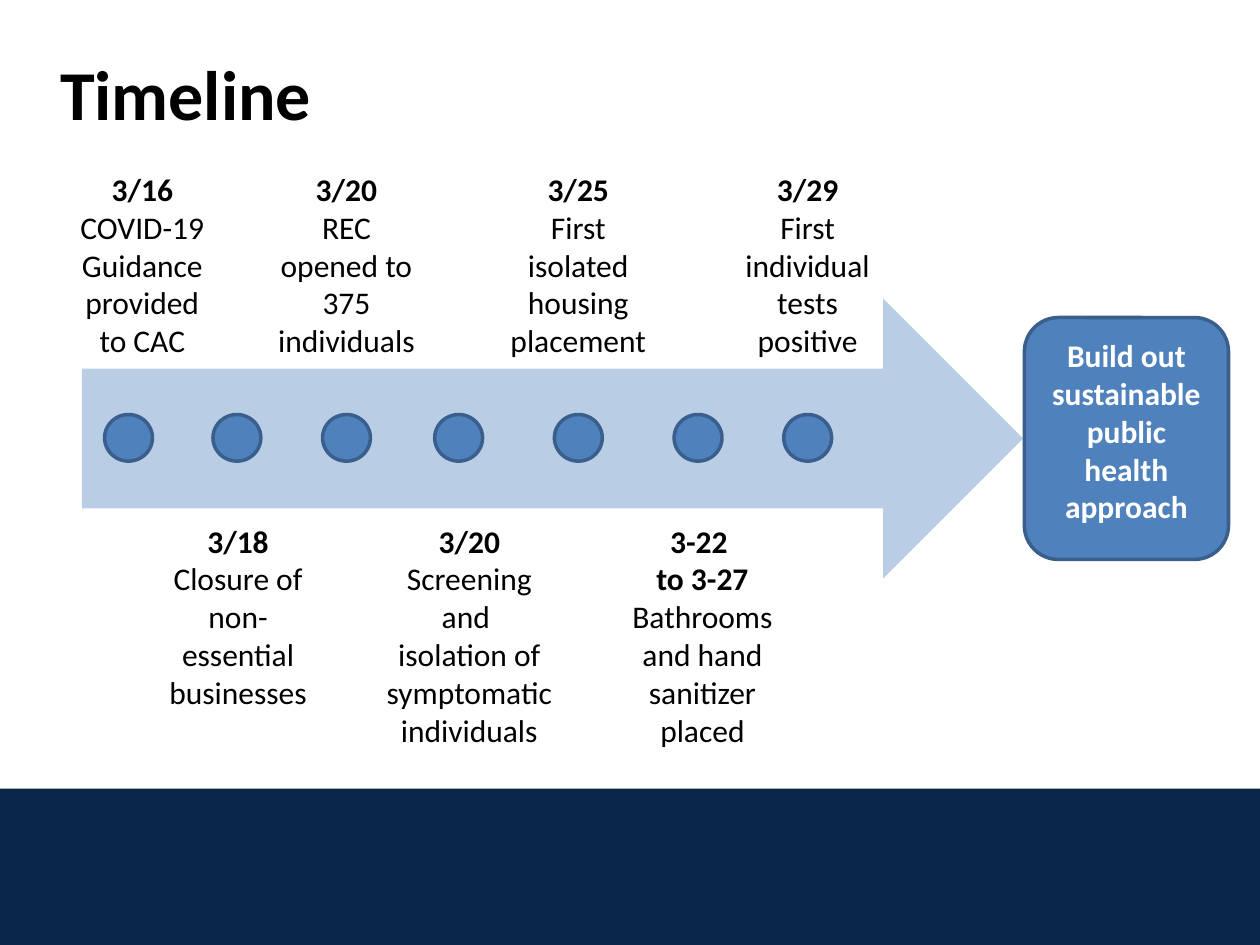
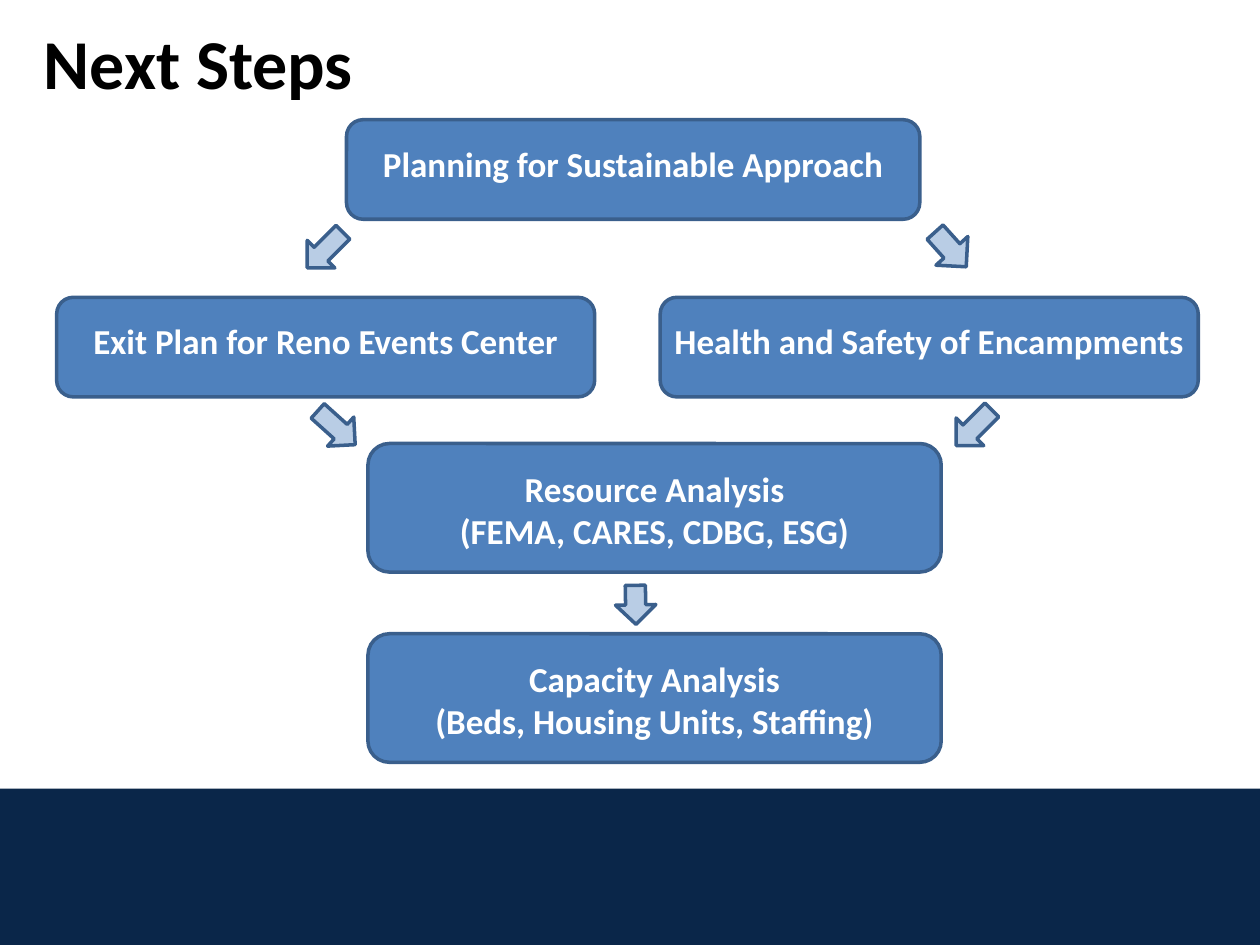
import dataclasses

import pptx
import pptx.dml.color
import pptx.enum.shapes
import pptx.enum.text
import pptx.util

SHAPES = pptx.enum.shapes.MSO_SHAPE
ALIGN = pptx.enum.text.PP_ALIGN
ANCHOR = pptx.enum.text.MSO_ANCHOR

COLUMNS, ROWS = 100, 75
CELL = pptx.util.Inches(0.1)


@dataclasses.dataclass(frozen=True)
class Theme:
    font: str = "Calibri"
    ink: str = "000000"
    light: str = "FFFFFF"
    band: str = "0A2649"
    box: str = "4F81BD"
    outline: str = "3A5F8C"
    arrow: str = "B9CDE5"
    title_size: int = 40
    step_size: int = 20
    label_size: int = 18
    line_width: int = 2


THEME = Theme()


def cells(*counts):
    return [round(count * CELL) for count in counts]


def rgb(value):
    return pptx.dml.color.RGBColor.from_string(value)


def set_values(target, values):
    for name, value in values.items():
        setattr(target, name, value)


def write(shape, lines, size, color, align=ALIGN.CENTER, bold_lines=None, insets=(1, 0.5)):
    """Write one paragraph per line; only the first bold_lines are bold, or all if None."""
    side, top = cells(*insets)
    frame = shape.text_frame
    set_values(frame, {
        "word_wrap": True, "vertical_anchor": ANCHOR.TOP,
        "margin_left": side, "margin_right": side, "margin_top": top, "margin_bottom": 0,
    })
    for index, line in enumerate(lines):
        paragraph = frame.add_paragraph() if index else frame.paragraphs[0]
        paragraph.alignment = align
        run = paragraph.add_run()
        run.text = line
        set_values(run.font, {
            "name": THEME.font, "size": pptx.util.Pt(size),
            "bold": bold_lines is None or index < bold_lines,
        })
        run.font.color.rgb = rgb(color)


def add_text(slide, area, lines, size, **options):
    write(slide.shapes.add_textbox(*cells(*area)), lines, size, THEME.ink, **options)


def add_figure(slide, kind, area, fill, outlined=True, rotation=0):
    shape = slide.shapes.add_shape(kind, *cells(*area))
    shape.shadow.inherit = False
    shape.rotation = rotation
    shape.fill.solid()
    shape.fill.fore_color.rgb = rgb(fill)
    if outlined:
        shape.line.color.rgb = rgb(THEME.outline)
        shape.line.width = pptx.util.Pt(THEME.line_width)
    else:
        shape.line.fill.background()
    return shape


def add_box(slide, area, lines, size=THEME.step_size, insets=(0.5, 1.4)):
    box = add_figure(slide, SHAPES.ROUNDED_RECTANGLE, area, THEME.box)
    write(box, lines, size, THEME.light, insets=insets)


def add_slide(presentation, title, left, top):
    """Add a slide with the shared bottom band and a title."""
    slide = presentation.slides.add_slide(presentation.slide_layouts[6])
    band_top = 62.6
    add_figure(slide, SHAPES.RECTANGLE, (0, band_top, COLUMNS, ROWS - band_top),
               THEME.band, outlined=False)
    add_text(slide, (left, top, 30, 7.7), [title], THEME.title_size, align=ALIGN.LEFT)
    return slide


def add_timeline(presentation):
    slide = add_slide(presentation, "Timeline", 3.8, 3.5)
    add_figure(slide, SHAPES.RIGHT_ARROW, (6.5, 23.7, 74.7, 22.2), THEME.arrow, outlined=False)
    # Dot left, label left, label width, bold lines, text; labels alternate above and below.
    events = [
        (8.3, 4.5, 13.6, 1, ["3/16", "COVID-19", "Guidance provided to CAC"]),
        (16.9, 12.1, 13.6, 1, ["3/18", "Closure of non-essential businesses"]),
        (25.6, 20.7, 13.6, 1, ["3/20", "REC opened to 375 individuals"]),
        (34.5, 29.5, 15.5, 1, ["3/20", "Screening and ", "isolation of symptomatic individuals"]),
        (44, 39.1, 13.6, 1, ["3/25", "First isolated housing placement"]),
        (53.5, 48.3, 14.9, 2, ["3-22 ", "to 3-27", "Bathrooms and hand sanitizer placed"]),
        (62.2, 57.3, 13.6, 1, ["3/29", "First individual tests positive"]),
    ]
    label_tops = (13, 40.9)
    for index, (dot_left, label_left, width, bold_lines, lines) in enumerate(events):
        add_figure(slide, SHAPES.OVAL, (dot_left, 32.9, 3.8, 3.7), THEME.box)
        add_text(slide, (label_left, label_tops[index % 2], width, 16.2), lines,
                 THEME.label_size, bold_lines=bold_lines)
    add_box(slide, (81.3, 25.2, 16.2, 19.2), ["Build out sustainable public health approach"],
            THEME.label_size, insets=(1.1, 0.7))


def add_next_steps(presentation):
    slide = add_slide(presentation, "Next Steps", 2.5, 1.1)
    steps = [
        ((27.5, 9.5, 45.5, 7.9), ["Planning for Sustainable Approach"]),
        ((4.5, 23.6, 42.7, 7.9), ["Exit Plan for Reno Events Center"]),
        ((52.4, 23.6, 42.7, 7.9), ["Health and Safety of Encampments"]),
        ((29.2, 35.2, 45.5, 10.2), ["Resource Analysis", "(FEMA, CARES, CDBG, ESG)"]),
        ((29.2, 50.3, 45.5, 10.2), ["Capacity Analysis", "(Beds, Housing Units, Staffing)"]),
    ]
    for area, lines in steps:
        add_box(slide, area, lines)
    arrows = [
        ((23.8, 18.3, 4, 3.1), 315),
        ((73.6, 18.1, 3.7, 3.4), 228),
        ((24.7, 32.4, 4, 3.1), 222),
        ((75.3, 32.4, 4, 3.1), 315),
        ((48.9, 46.4, 3.1, 3.2), 269),
    ]
    for area, rotation in arrows:
        add_figure(slide, SHAPES.LEFT_ARROW, area, THEME.arrow, rotation=rotation)


def main():
    presentation = pptx.Presentation()
    presentation.slide_width, presentation.slide_height = cells(COLUMNS, ROWS)
    add_timeline(presentation)
    add_next_steps(presentation)
    presentation.save("out.pptx")


if __name__ == "__main__":
    main()
